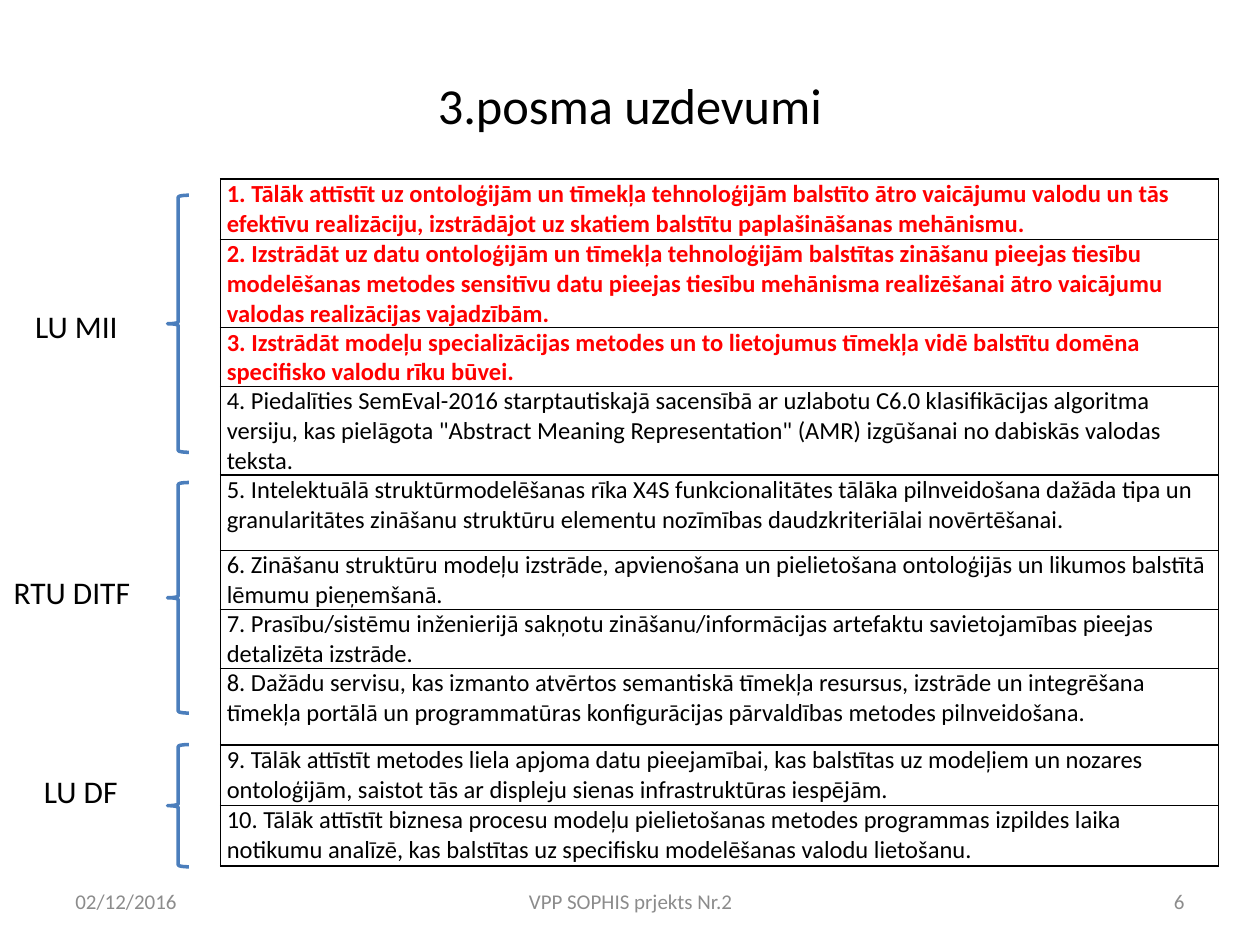
from pptx import Presentation
from pptx.dml.color import RGBColor
from pptx.enum.shapes import MSO_SHAPE
from pptx.enum.text import MSO_ANCHOR, MSO_AUTO_SIZE, PP_ALIGN
from pptx.oxml import parse_xml
from pptx.oxml.ns import nsdecls
from pptx.util import Inches, Pt

WIDE, HIGH = 10, 7.5
SIDE = 0.05 * WIDE
BLACK, RED, GREY, BLUE = "000000", "FF0000", "8C8C8C", "4B7EBC"

# Row height, task; the first three tasks are stressed
TASKS = [
    (0.48, "1. Tālāk attīstīt uz ontoloģijām un tīmekļa tehnoloģijām balstīto ātro vaicājumu valodu un tās efektīvu realizāciju, izstrādājot uz skatiem balstītu paplašināšanas mehānismu."),
    (0.6, "2. Izstrādāt uz datu ontoloģijām un tīmekļa tehnoloģijām balstītas zināšanu pieejas tiesību modelēšanas metodes sensitīvu datu pieejas tiesību mehānisma realizēšanai ātro vaicājumu valodas realizācijas vajadzībām."),
    (0.36, "3. Izstrādāt modeļu specializācijas metodes un to lietojumus tīmekļa vidē balstītu domēna specifisko valodu rīku būvei."),
    (0.6, "4. Piedalīties SemEval-2016 starptautiskajā sacensībā ar uzlabotu C6.0 klasifikācijas algoritma versiju, kas pielāgota \"Abstract Meaning Representation\" (AMR) izgūšanai no dabiskās valodas teksta."),
    (0.6, "5. Intelektuālā struktūrmodelēšanas rīka X4S funkcionalitātes tālāka pilnveidošana dažāda tipa un granularitātes zināšanu struktūru elementu nozīmības daudzkriteriālai novērtēšanai."),
    (0.36, "6. Zināšanu struktūru modeļu izstrāde, apvienošana un pielietošana ontoloģijās un likumos balstītā lēmumu pieņemšanā."),
    (0.36, "7. Prasību/sistēmu inženierijā sakņotu zināšanu/informācijas artefaktu savietojamības pieejas detalizēta izstrāde."),
    (0.61, "8. Dažādu servisu, kas izmanto atvērtos semantiskā tīmekļa resursus, izstrāde un integrēšana tīmekļa portālā un programmatūras konfigurācijas pārvaldības metodes pilnveidošana."),
    (0.48, "9. Tālāk attīstīt metodes liela apjoma datu pieejamībai, kas balstītas uz modeļiem un nozares ontoloģijām, saistot tās ar displeju sienas infrastruktūras iespējām."),
    (0.48, "10. Tālāk attīstīt biznesa procesu modeļu pielietošanas metodes programmas izpildes laika notikumu analīzē, kas balstītas uz specifisku modelēšanas valodu lietošanu."),
]
STRESSED = 3

# Label, its left, top and width, then top and height of its brace
TEAMS = [
    ("LU MII", 0.18, 2.39, 0.86, 1.55, 2.04),
    ("RTU DITF", 0.01, 4.5, 1.14, 3.83, 1.83),
    ("LU DF", 0.25, 6.08, 0.8, 5.91, 0.97),
]

# Text, left, width, alignment
FOOT = [
    ("02/12/2016", SIDE, 2.33, PP_ALIGN.LEFT),
    ("VPP SOPHIS prjekts Nr.2", 3.42, 3.17, PP_ALIGN.CENTER),
    ("6", WIDE - SIDE - 2.33, 2.33, PP_ALIGN.RIGHT),
]


def paint(tint):
    return RGBColor.from_string(tint)


def box(*spans):
    return [Inches(span) for span in spans]


def write(frame, text, size, tint=BLACK, align=PP_ALIGN.LEFT, bold=False):
    para = frame.paragraphs[0]
    para.alignment = align
    run = para.add_run()
    run.text = text
    font = run.font
    font.name, font.size, font.bold = "Calibri", Pt(size), bold
    font.color.rgb = paint(tint)


def add_title(slide, text):
    title = slide.shapes.title
    title.left, title.top, title.width, title.height = box(SIDE, 0.58, WIDE - 2 * SIDE, 0.5)
    frame = title.text_frame
    frame.auto_size = MSO_AUTO_SIZE.NONE
    frame.vertical_anchor = MSO_ANCHOR.MIDDLE
    write(frame, text, 28.8, align=PP_ALIGN.CENTER)


def add_foot(slide, text, left, width, align):
    frame = slide.shapes.add_textbox(*box(left, 6.95, width, 0.4)).text_frame
    frame.word_wrap = True
    frame.vertical_anchor = MSO_ANCHOR.MIDDLE
    write(frame, text, 12, GREY, align)


def add_label(slide, text, left, top, width):
    frame = slide.shapes.add_textbox(*box(left, top, width, 0.4)).text_frame
    frame.word_wrap = False
    frame.auto_size = MSO_AUTO_SIZE.SHAPE_TO_FIT_TEXT
    write(frame, text, 18)


def add_brace(slide, top, height):
    brace = slide.shapes.add_shape(MSO_SHAPE.LEFT_BRACE, *box(1.33, top, 0.17, height))
    brace.shadow.inherit = False
    brace.fill.background()
    brace.line.color.rgb = paint(BLUE)
    brace.line.width = Pt(2)


def edge(cell):
    """Draw a thin black border on all four sides of a cell."""
    props = cell._tc.get_or_add_tcPr()
    for spot, side in enumerate(("lnL", "lnR", "lnT", "lnB")):
        props.insert(spot, parse_xml(
            f'<a:{side} {nsdecls("a")} w="{Pt(1)}"><a:solidFill>'
            f'<a:srgbClr val="{BLACK}"/></a:solidFill></a:{side}>'))


def add_tasks(slide):
    total = sum(height for height, _ in TASKS)
    grid = slide.shapes.add_table(len(TASKS), 1, *box(1.75, 1.42, 7.92, total)).table
    grid.first_row = grid.horz_banding = False
    for spot, (height, text) in enumerate(TASKS):
        grid.rows[spot].height = Inches(height)
        cell = grid.cell(spot, 0)
        cell.margin_left = cell.margin_right = Inches(0.05)
        cell.margin_top = cell.margin_bottom = 0
        cell.fill.background()
        edge(cell)
        key = spot < STRESSED
        write(cell.text_frame, text, 14, RED if key else BLACK, bold=key)


def main():
    deck = Presentation()
    deck.slide_width, deck.slide_height = box(WIDE, HIGH)
    slide = deck.slides.add_slide(deck.slide_layouts.get_by_name("Title Only"))
    add_title(slide, "3.posma uzdevumi")
    for foot in FOOT:
        add_foot(slide, *foot)
    add_tasks(slide)
    for name, left, top, width, start, height in TEAMS:
        add_label(slide, name, left, top, width)
        add_brace(slide, start, height)
    deck.save("out.pptx")


if __name__ == "__main__":
    main()
